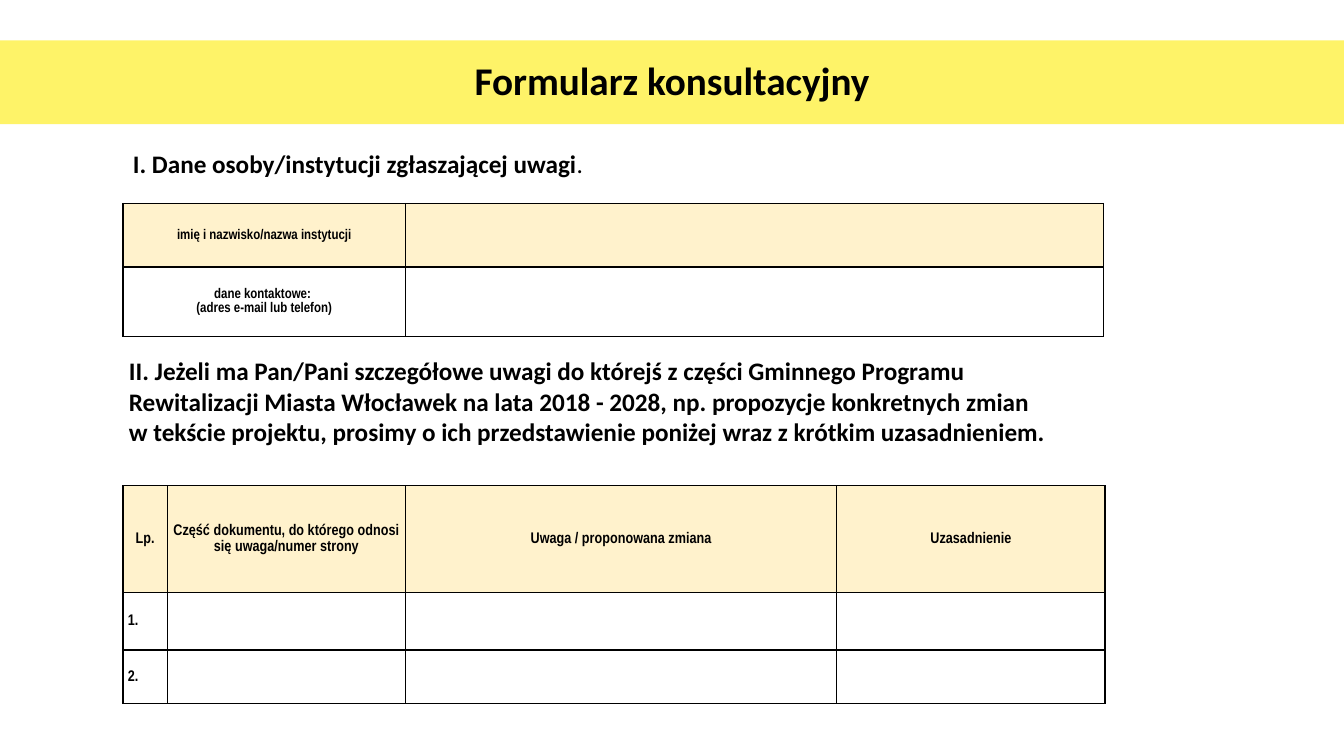
"""Build the consultation form slide with two form tables."""
from lxml import etree
from pptx import Presentation
from pptx.dml.color import RGBColor
from pptx.enum import text
from pptx.oxml import ns
from pptx.util import Cm, Pt

YELLOW = RGBColor(0xFE, 0xF3, 0x68)
CREAM = RGBColor(0xFF, 0xF2, 0xCC)
BLACK = RGBColor(0, 0, 0)
CENTER = text.PP_ALIGN.CENTER
LEFT = text.PP_ALIGN.LEFT
MIDDLE = text.MSO_ANCHOR.MIDDLE


def format_text(text_frame, font_name, size, alignment, line_spacing):
    for paragraph in text_frame.paragraphs:
        paragraph.alignment = alignment
        paragraph.line_spacing = line_spacing
        for run in paragraph.runs:
            run.font.name = font_name
            run.font.size = Pt(size)
            run.font.bold = True
            run.font.color.rgb = BLACK


def add_border(cell):
    properties = cell._tc.get_or_add_tcPr()
    for position, side in enumerate(("lnL", "lnR", "lnT", "lnB")):
        line = etree.Element(ns.qn(f"a:{side}"), w=str(Pt(1)))
        fill = etree.SubElement(line, ns.qn("a:solidFill"))
        etree.SubElement(fill, ns.qn("a:srgbClr"), val=str(BLACK))
        properties.insert(position, line)


presentation = Presentation()
presentation.slide_width = Cm(33.87)
presentation.slide_height = Cm(19.05)
slide = presentation.slides.add_slide(presentation.slide_layouts[5])

title = slide.shapes.title
title.left, title.top, title.width, title.height = Cm(0), Cm(1.02), Cm(33.87), Cm(2.11)
title.fill.solid()
title.fill.fore_color.rgb = YELLOW
title.text_frame.text = "Formularz konsultacyjny"
title.text_frame.vertical_anchor = MIDDLE
title.text_frame.auto_size = text.MSO_AUTO_SIZE.NONE
format_text(title.text_frame, "Calibri", 28, CENTER, 0.9)

tables = [
    (5.13, 10, [7.11, 17.6], [1.6, 1.75], [
        ["imię i nazwisko/nazwa instytucji", ""],
        ["dane kontaktowe: \v(adres e-mail lub telefon)", ""],
    ]),
    (12.24, 11, [1.12, 6, 10.87, 6.76], [2.69, 1.45, 1.35], [
        ["Lp.", "Część dokumentu, do którego odnosi się uwaga/numer strony",
         "Uwaga / proponowana zmiana", "Uzasadnienie"],
        ["1.", "", "", ""],
        ["2.", "", "", ""],
    ]),
]
for top, size, widths, heights, rows in tables:
    frame = slide.shapes.add_table(len(rows), len(widths), Cm(3.1), Cm(top),
                                   Cm(sum(widths)), Cm(sum(heights)))
    table = frame.table
    table.horz_banding = False
    for column, width in zip(table.columns, widths):
        column.width = Cm(width)
    for row_index, values in enumerate(rows):
        table.rows[row_index].height = Cm(heights[row_index])
        for column_index, value in enumerate(values):
            cell = table.cell(row_index, column_index)
            if row_index == 0:
                cell.fill.solid()
                cell.fill.fore_color.rgb = CREAM
            else:
                cell.fill.background()
            add_border(cell)
            cell.vertical_anchor = MIDDLE
            cell.margin_left = cell.margin_right = Cm(0.12)
            cell.margin_top = cell.margin_bottom = Cm(0)
            cell.text_frame.text = value
            alignment = LEFT if value in ("1.", "2.") else CENTER
            format_text(cell.text_frame, "Arial Narrow", size, alignment, 1.07)

headings = [
    (3.1, 3.61, 11.94, 1.03, False, "I. Dane osoby/instytucji zgłaszającej uwagi"),
    (3, 8.84, 24.05, 2.57, True,
     "II. Jeżeli ma Pan/Pani szczegółowe uwagi do którejś z części Gminnego Programu "
     "Rewitalizacji Miasta Włocławek na lata 2018 - 2028, np. propozycje konkretnych zmian \v"
     "w tekście projektu, prosimy o ich przedstawienie poniżej wraz z krótkim uzasadnieniem."),
]
for left, top, width, height, wrap, wording in headings:
    heading = slide.shapes.add_textbox(Cm(left), Cm(top), Cm(width), Cm(height))
    heading.text_frame.word_wrap = wrap
    heading.text_frame.auto_size = text.MSO_AUTO_SIZE.SHAPE_TO_FIT_TEXT
    heading.text_frame.text = wording
    if not wrap:
        full_stop = heading.text_frame.paragraphs[0].add_run()
        full_stop.text = "."
    format_text(heading.text_frame, "Calibri", 18, LEFT, 1.0)
    if not wrap:
        full_stop.font.bold = False

presentation.save("out.pptx")
